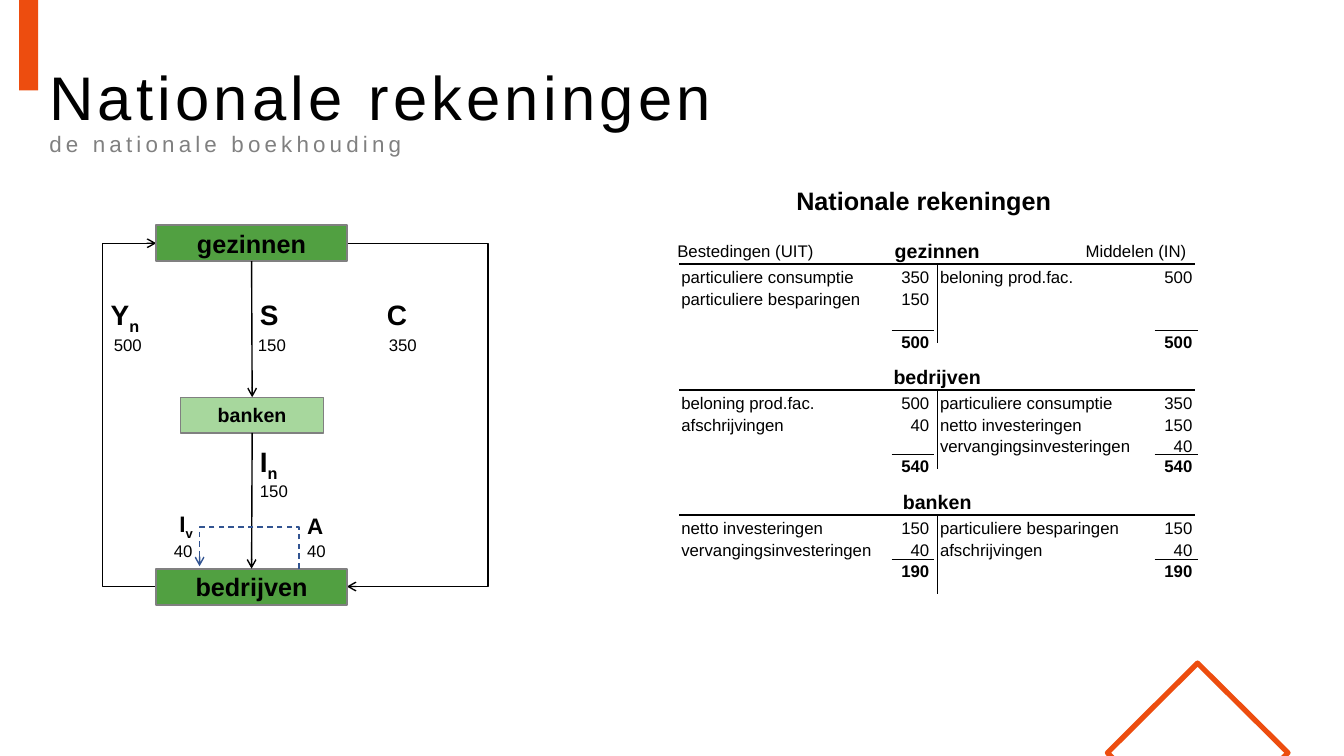
from dataclasses import dataclass

from lxml import etree
from pptx import Presentation
from pptx.dml.color import RGBColor
from pptx.enum.dml import MSO_LINE
from pptx.enum.shapes import MSO_CONNECTOR, MSO_SHAPE
from pptx.enum.text import MSO_ANCHOR, MSO_AUTO_SIZE, PP_ALIGN
from pptx.oxml.ns import qn
from pptx.shapes.autoshape import Shape
from pptx.shapes.connector import Connector
from pptx.slide import Slide
from pptx.text.text import Font
from pptx.util import Cm, Pt

LEFT, CENTER, RIGHT = PP_ALIGN.LEFT, PP_ALIGN.CENTER, PP_ALIGN.RIGHT
MIDDLE = MSO_ANCHOR.MIDDLE
NO_AUTOFIT = MSO_AUTO_SIZE.NONE
STRAIGHT = MSO_CONNECTOR.STRAIGHT
RECTANGLE = MSO_SHAPE.RECTANGLE
DASH = MSO_LINE.DASH
TOP_SIDE, BOTTOM_SIDE = 0, 2
Points = list[tuple[float, float]]


@dataclass(frozen=True)
class Theme:
    font: str = "Arial"
    ink: str = "000000"
    grey: str = "808080"
    accent: str = "ED4D0F"
    sector: str = "51A041"
    bank: str = "A7D79D"
    depreciation: str = "325491"
    title: int = 44
    subtitle: int = 16
    heading: int = 18
    symbol: int = 20
    small_symbol: int = 16
    account: int = 14
    body: int = 12


THEME = Theme()


@dataclass(frozen=True)
class Label:
    text: str
    left: float
    top: float
    width: float
    height: float = 0.76
    size: int = THEME.body
    bold: bool = False
    align: PP_ALIGN = LEFT
    subscript: str = ""


@dataclass(frozen=True)
class Sector:
    name: str
    left: float
    top: float
    width: float
    height: float
    fill: str
    size: int
    border: float


@dataclass(frozen=True)
class Account:
    name: str
    name_width: float
    top: float
    total_offset: float
    total: str
    uses: list[tuple[str, str]]
    resources: list[tuple[str, str]]


# Circular flow
SECTORS = [
    Sector("gezinnen", 3.94, 5.67, 4.8, 0.91, THEME.sector, THEME.heading, 1.5),
    Sector("banken", 4.55, 10.01, 3.61, 0.9, THEME.bank, THEME.account, 1),
    Sector("bedrijven", 3.94, 14.33, 4.8, 0.91, THEME.sector, THEME.heading, 1.5),
]
INCOME_LOOP = [(3.94, 14.78), (2.59, 14.78), (2.59, 6.13), (3.94, 6.13)]
CONSUMPTION_LOOP = [(8.74, 6.13), (12.3, 6.13), (12.3, 14.78), (8.74, 14.78)]
DEPRECIATION_LOOP = [(7.54, 14.33), (7.54, 13.28), (5.03, 13.28), (5.03, 14.27)]
FLOW_LABELS = [
    Label("Y", 2.54, 7.37, 1.4, 1.12, THEME.symbol, True, subscript="n"),
    Label("S", 6.3, 7.37, 0.97, 1.12, THEME.symbol, True),
    Label("C", 9.5, 7.37, 1.17, 1.12, THEME.symbol, True),
    Label("I", 6.3, 11.07, 1.09, 1.12, THEME.symbol, True, subscript="n"),
    Label("A", 7.49, 12.78, 1.17, 0.94, THEME.small_symbol, True),
    Label("I", 3.94, 12.73, 1.17, 0.94, THEME.small_symbol, True, RIGHT, "v"),
    Label("500", 2.62, 8.31, 1.22),
    Label("150", 6.25, 8.31, 1.22),
    Label("350", 9.55, 8.31, 1.22),
    Label("150", 6.3, 11.99, 1.22),
    Label("40", 7.49, 13.51, 0.99),
    Label("40", 4.11, 13.49, 0.99, align=RIGHT),
]

# Accounts
HEADINGS = [
    Label("Nationale rekeningen", 19.66, 4.55, 7.24, 1.02, THEME.heading, True, CENTER),
    Label("Bestedingen (UIT)", 16.82, 5.94, 4.09),
    Label("Middelen (IN)", 27.08, 5.94, 3.07, align=RIGHT),
]
ACCOUNTS = [
    Account("gezinnen", 2.72, 6.65, 1.68, "500",
            [("particuliere consumptie", "350"), ("particuliere besparingen", "150")],
            [("beloning prod.fac.", "500")]),
    Account("bedrijven", 2.79, 9.83, 1.63, "540",
            [("beloning prod.fac.", "500"), ("afschrijvingen", "40")],
            [("particuliere consumptie", "350"), ("netto investeringen", "150"),
             ("vervangingsinvesteringen", "40")]),
    Account("banken", 2.26, 12.98, 1.12, "190",
            [("netto investeringen", "150"), ("vervangingsinvesteringen", "40")],
            [("particuliere besparingen", "150"), ("afschrijvingen", "40")]),
]
ENTRY_WIDTHS = {
    "particuliere consumptie": 4.9, "particuliere besparingen": 5.05,
    "beloning prod.fac.": 3.89, "afschrijvingen": 3.12,
    "netto investeringen": 4.11, "vervangingsinvesteringen": 5.33,
}
ACCOUNT_LEFT, ACCOUNT_MIDDLE, ACCOUNT_RIGHT = 17.12, 23.62, 30.12
STEM_HEIGHT, ROW_STEP = 2.0, 0.54
USES_COLUMN, RESOURCES_COLUMN = (16.92, 23.67), (23.44, 30.3)


def style_font(font: Font, size: int, bold: bool = False, color: str = THEME.ink) -> None:
    font.name, font.size, font.bold = THEME.font, Pt(size), bold
    font.color.rgb = RGBColor.from_string(color)


def style_line(item: Shape | Connector, color: str, width: float, arrow: bool = False) -> None:
    item.line.color.rgb = RGBColor.from_string(color)
    item.line.width = Pt(width)
    if arrow:
        etree.SubElement(item.line._get_or_add_ln(), qn("a:tailEnd"), type="arrow")


def add_label(slide: Slide, label: Label) -> None:
    box = slide.shapes.add_textbox(*map(Cm, (label.left, label.top, label.width, label.height)))
    box.text_frame.word_wrap = True
    paragraph = box.text_frame.paragraphs[0]
    paragraph.alignment = label.align
    paragraph.add_run().text = label.text
    if label.subscript:
        run = paragraph.add_run()
        run.text = label.subscript
        run.font._element.set("baseline", "-25000")
    style_font(paragraph.font, label.size, label.bold)


def add_rectangle(slide: Slide, left: float, top: float, width: float, height: float,
                  fill: str) -> Shape:
    shape = slide.shapes.add_shape(RECTANGLE, *map(Cm, (left, top, width, height)))
    shape.shadow.inherit = False
    shape.fill.solid()
    shape.fill.fore_color.rgb = RGBColor.from_string(fill)
    return shape


def add_sector(slide: Slide, sector: Sector) -> Shape:
    shape = add_rectangle(slide, sector.left, sector.top, sector.width, sector.height, sector.fill)
    style_line(shape, THEME.grey, sector.border)
    shape.text_frame.vertical_anchor = MIDDLE
    paragraph = shape.text_frame.paragraphs[0]
    paragraph.text, paragraph.alignment = sector.name, CENTER
    style_font(paragraph.font, sector.size, True)
    return shape


def add_line(slide: Slide, start: tuple[float, float], end: tuple[float, float],
             width: float = 1, arrow: bool = False) -> Connector:
    line = slide.shapes.add_connector(STRAIGHT, *map(Cm, (*start, *end)))
    etree.SubElement(line._element.spPr, qn("a:effectLst"))
    style_line(line, THEME.ink, width, arrow)
    return line


def add_outline(slide: Slide, points: Points, color: str, width: float,
                closed: bool = False) -> Shape:
    corners = [(Cm(x), Cm(y)) for x, y in points]
    builder = slide.shapes.build_freeform(*corners[0])
    builder.add_line_segments(corners[1:], close=closed)
    shape = builder.convert_to_shape()
    shape.shadow.inherit = False
    shape.fill.background()
    style_line(shape, color, width, arrow=not closed)
    return shape


def add_account(slide: Slide, account: Account) -> None:
    top = account.top
    add_line(slide, (ACCOUNT_LEFT, top), (ACCOUNT_RIGHT, top))
    add_line(slide, (ACCOUNT_MIDDLE, top), (ACCOUNT_MIDDLE, top + STEM_HEIGHT))
    add_label(slide, Label(account.name, ACCOUNT_MIDDLE - account.name_width / 2, top - 0.76,
                           account.name_width, 0.86, THEME.account, True, CENTER))
    total_top = top + account.total_offset
    for (left, right), entries in ((USES_COLUMN, account.uses),
                                   (RESOURCES_COLUMN, account.resources)):
        for row, (entry, amount) in enumerate(entries):
            row_top = top - 0.05 + row * ROW_STEP
            amount_width = 0.51 + 0.24 * len(amount)
            add_label(slide, Label(entry, left, row_top, ENTRY_WIDTHS[entry]))
            add_label(slide, Label(amount, right - amount_width, row_top, amount_width, align=RIGHT))
        add_line(slide, (right - 1.2, total_top), (right - 0.12, total_top), 0.75)
        add_label(slide, Label(account.total, right - 1.24, total_top - 0.1, 1.24,
                               bold=True, align=RIGHT))


def add_title(slide: Slide) -> None:
    title = slide.shapes.title
    title.left, title.top, title.width, title.height = map(Cm, (0.99, 0.99, 32.03, 3.68))
    title.text_frame.auto_size = NO_AUTOFIT
    title.text_frame.vertical_anchor = MIDDLE
    paragraph = title.text_frame.paragraphs[0]
    paragraph.alignment, paragraph.line_spacing = LEFT, 0.9
    for text, size, color in (("Nationale rekeningen", THEME.title, THEME.ink),
                              ("de nationale boekhouding", THEME.subtitle, THEME.grey)):
        if paragraph.runs:
            paragraph.add_line_break()
        run = paragraph.add_run()
        run.text = text
        style_font(run.font, size, color=color)
        run.font._element.set("spc", "300")


def main() -> None:
    presentation = Presentation()
    presentation.slide_width, presentation.slide_height = Cm(33.87), Cm(19.05)
    slide = presentation.slides.add_slide(presentation.slide_layouts[5])

    # Decoration and title
    add_rectangle(slide, 0.48, -0.64, 0.48, 2.92, THEME.accent).line.fill.background()
    add_outline(slide, [(32.23, 19.2), (28.14, 19.2), (27.91, 18.97), (30.18, 16.71),
                        (32.46, 18.97)], THEME.accent, 3.75, closed=True)
    add_title(slide)

    # Circular flow
    for loop in (INCOME_LOOP, CONSUMPTION_LOOP):
        add_outline(slide, loop, THEME.ink, 1)
    sectors = [add_sector(slide, sector) for sector in SECTORS]
    for source, target in zip(sectors, sectors[1:]):
        arrow = add_line(slide, (0, 0), (1, 1), arrow=True)
        arrow.begin_connect(source, BOTTOM_SIDE)
        arrow.end_connect(target, TOP_SIDE)
    add_outline(slide, DEPRECIATION_LOOP, THEME.depreciation, 1).line.dash_style = DASH

    # Labels and accounts
    for label in FLOW_LABELS + HEADINGS:
        add_label(slide, label)
    for account in ACCOUNTS:
        add_account(slide, account)
    presentation.save("out.pptx")


if __name__ == "__main__":
    main()
